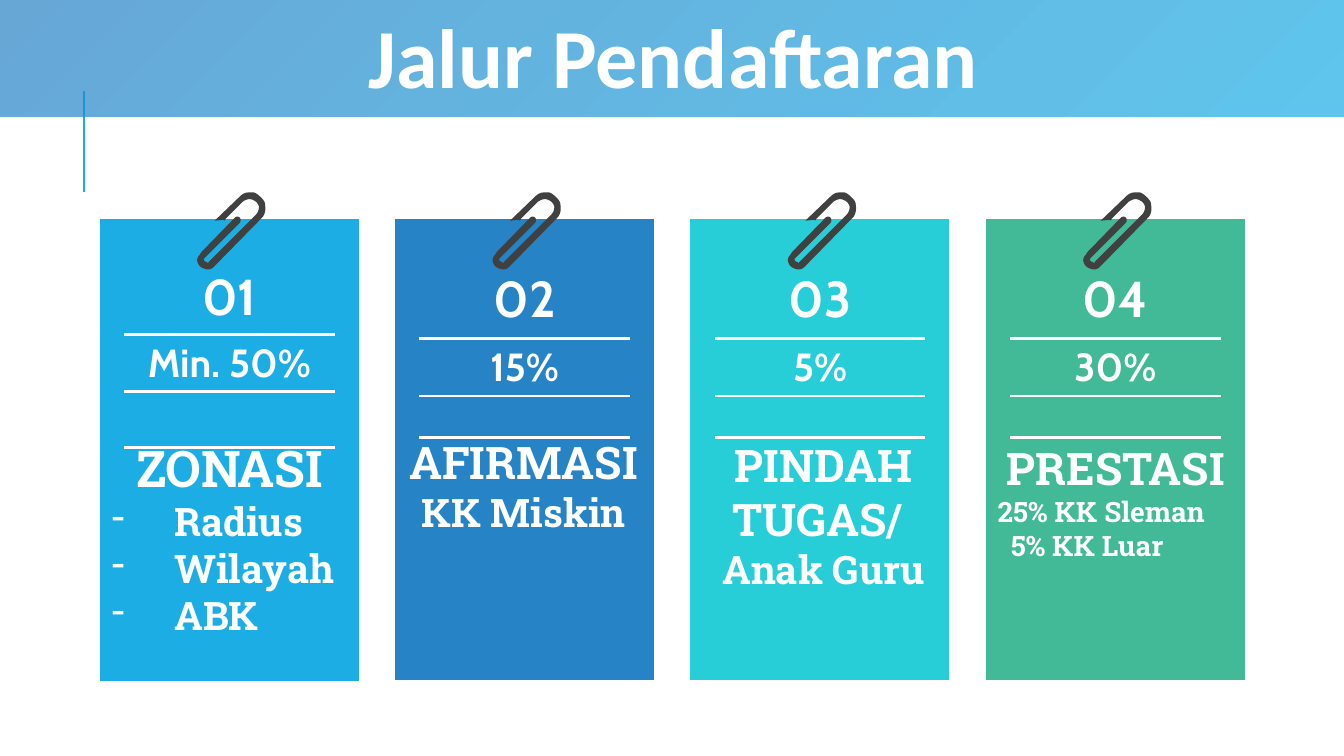
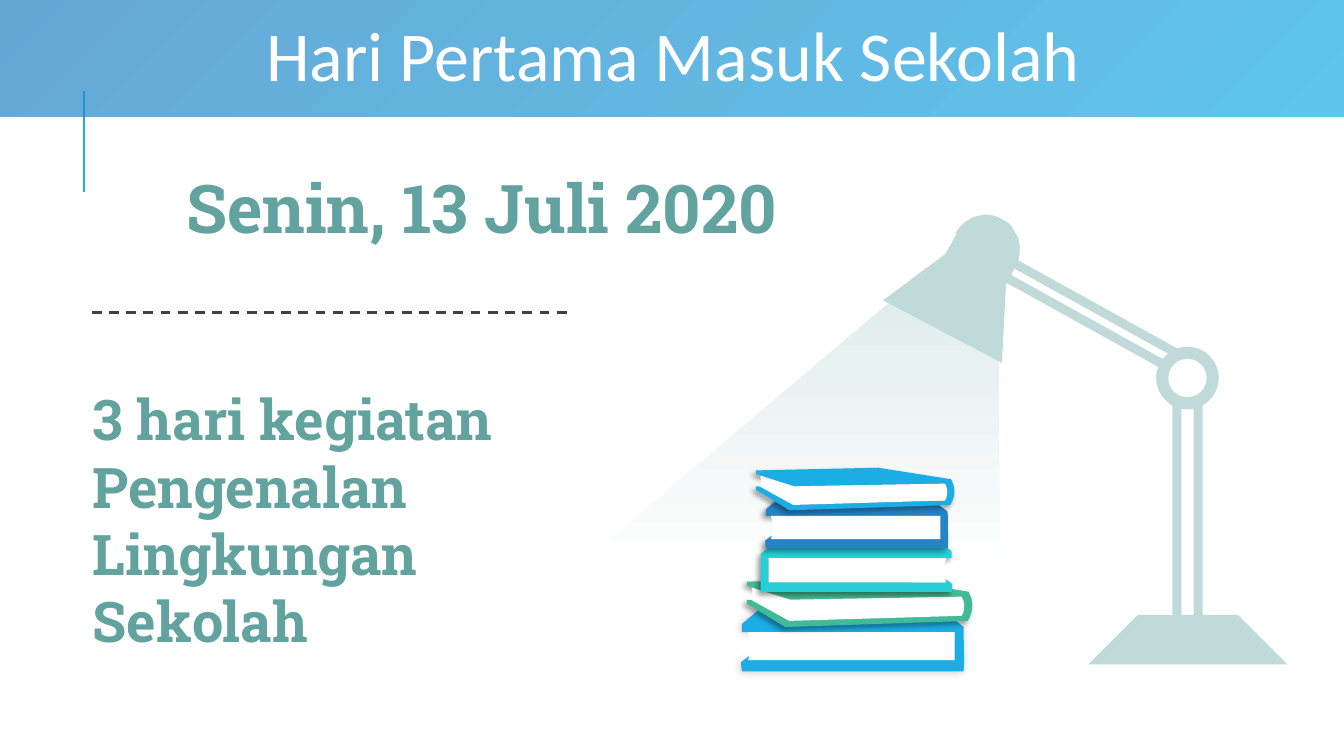
"""Build two school enrolment slides: the admission routes and the first school day."""
from lxml.etree import SubElement
from pptx import Presentation
from pptx.dml.color import RGBColor
from pptx.enum.dml import MSO_LINE
from pptx.enum.shapes import MSO_CONNECTOR, MSO_SHAPE as SHAPE
from pptx.enum.text import MSO_ANCHOR as ANCHOR, PP_ALIGN as ALIGN
from pptx.oxml.ns import qn
from pptx.util import Inches, Pt

STEP = Inches(0.1)
COLUMNS, ROWS = 133.33, 75
BAND_HEIGHT = 11.6
CARD_LEFT, CARD_TOP, CARD_PITCH = 9.9, 21.7, 29.3

WHITE = RGBColor(0xFF, 0xFF, 0xFF)
BLACK = RGBColor(0x00, 0x00, 0x00)
CHARCOAL = RGBColor(0x40, 0x40, 0x40)
SKY = RGBColor(0x1C, 0xAD, 0xE4)
BLUE = RGBColor(0x26, 0x83, 0xC6)
CYAN = RGBColor(0x27, 0xCE, 0xD7)
GREEN = RGBColor(0x42, 0xBA, 0x97)
SAGE = RGBColor(0x62, 0xA3, 0x9F)
LAMP = RGBColor(0xC0, 0xDA, 0xD9)
GLOW = RGBColor(0xE0, 0xED, 0xEC)

NO_TABLE_STYLE = "{2D5ABB26-0587-4C30-8999-92F81FD0307C}"
SLAB = "Roboto Slab"

CLIP = [
    (5, 0), (5.2, 0, 5.4, 0, 5.6, 0), (5.9, 0.1, 6.1, 0.3, 6.3, 0.5),
    (6.5, 0.7, 6.7, 0.9, 6.7, 1.2), (6.8, 1.7, 6.7, 2.3, 6.3, 2.6), (1.6, 7.4),
    (1.4, 7.6, 1.1, 7.7, 0.8, 7.6), (0.4, 7.5, 0.1, 7.3, 0, 6.9),
    (-0.1, 6.7, 0, 6.4, 0.2, 6.2), (0.4, 5.9), (3.7, 2.5),
    (3.8, 2.4, 3.9, 2.4, 4, 2.4), (4, 2.4, 4.1, 2.4, 4.2, 2.5),
    (4.3, 2.6, 4.3, 2.9, 4.2, 3), (0.7, 6.5), (0.6, 6.6, 0.6, 6.7, 0.7, 6.8),
    (0.7, 6.8, 0.8, 6.9, 0.9, 6.9), (1, 7, 1.1, 7, 1.1, 6.9), (5.8, 2.2),
    (6, 2, 6.1, 1.7, 6.1, 1.4), (6, 1, 5.7, 0.8, 5.4, 0.7),
    (5.1, 0.6, 4.8, 0.7, 4.5, 0.9), (2.6, 2.8), (2.8, 2.7), (1.7, 2.8),
    (4.2, 0.4), (4.4, 0.2, 4.7, 0, 5, 0),
]
BEAM = [(99.1, 35.2), (99, 45.9, 99.3, 56.7, 99.3, 67.4), (44.3, 67.2), (89.5, 29)]
LAMP_HEAD = [
    (11.7, 0.4), (11.2, 0.1, 10.6, 0, 10.1, 0), (8.8, 0.1, 7.8, 0.8, 7.2, 1.8),
    (7.3, 1.9), (6.2, 3.9), (0, 8.5), (11.8, 14.7), (12.2, 7), (13.4, 4.6),
    (13.4, 4.7, 14, 2.6, 13, 1.6), (12.7, 0.9, 12.3, 0.7, 11.7, 0.4),
]
FLAT_COVER = [
    (1.9, 0), (0.1, 1.5), (0.1, 2.3), (21.2, 2.4), (21.1, 5.1), (0.8, 5.1),
    (0.8, 4.7), (0, 5.3), (0.1, 6.2), (22.1, 6.2), (22.2, 5.8, 22.1, 3.3, 22.1, 1.8),
    (19.8, 0),
]
FLAT_PAGES = [(0.7, 2.3), (21.2, 2.3), (21.2, 5.1), (0.7, 5.1), (1, 4.6, 1.2, 3.3, 0.7, 2.3)]
TILTED_COVER = [
    (0.5, 2.1), (0, 2.1), (0, 2.5), (3.8, 4.8), (21.9, 4.2),
    (22.4, 3.4, 22.6, 2.4, 22, 1.3), (13.8, 0), (0, 0.3), (0, 0.7), (4, 2.1),
    (21.2, 1.8), (21.7, 2.4, 21.6, 3, 21.3, 3.7), (4.2, 4.2),
]
TILTED_PAGES = [
    (0.5, 0.9), (0.6, 1.4, 0.6, 2, 0.4, 2.1), (4.2, 4.2), (21.3, 3.7),
    (21.6, 3.3, 21.7, 2.4, 21.3, 1.8), (4.3, 2.1),
]


def write(frame, text, *, size, font=SLAB, color=WHITE, bold=True, align=ALIGN.CENTER,
          spacing=None, before=None, after=None, margin=0, bullet=None):
    paragraph = frame.add_paragraph() if frame.text else frame.paragraphs[0]
    paragraph.alignment = align
    paragraph.line_spacing = spacing
    paragraph.space_before, paragraph.space_after = before, after
    run = paragraph.add_run()
    run.text = text
    run.font.size, run.font.name, run.font.bold = Pt(size), font, bold
    run.font.color.rgb = color
    properties = paragraph._p.get_or_add_pPr()
    if margin:
        properties.set("marL", str(round(margin * STEP)))
    if bullet:
        properties.set("indent", str(-round(margin * STEP)))
        SubElement(properties, qn("a:buChar")).set("char", bullet)


def draw_outline(slide, segments, color, left=0, top=0, scale=1, mirror_width=None, shadow=None):
    points = [segments[0]]
    for segment in segments[1:]:
        if len(segment) == 2:
            points.append(segment)
            continue
        start, curve = points[-1], [segment[:2], segment[2:4], segment[4:]]
        for t in (0.2, 0.4, 0.6, 0.8, 1):
            weights = [(1 - t) ** 3, 3 * t * (1 - t) ** 2, 3 * t * t * (1 - t), t ** 3]
            points.append(tuple(sum(w * p[axis] for w, p in zip(weights, [start, *curve]))
                                for axis in (0, 1)))
    if mirror_width:
        points = [(mirror_width - x, y) for x, y in points]
    points = [((left + x * scale) * STEP, (top + y * scale) * STEP) for x, y in points]
    builder = slide.shapes.build_freeform(*points[0])
    builder.add_line_segments(points[1:], close=True)
    shape = builder.convert_to_shape()
    shape.shadow.inherit = False
    shape.fill.solid()
    shape.fill.fore_color.rgb = color
    shape.line.fill.background()
    if shadow:
        opacity, blur, distance = shadow
        effects = shape._element.spPr.find(qn("a:effectLst"))
        outer = SubElement(effects, qn("a:outerShdw"), blurRad=str(Pt(blur)), dist=str(Pt(distance)),
                           dir="8100000", algn="tr", rotWithShape="0")
        shade = SubElement(outer, qn("a:srgbClr"), val=str(BLACK))
        SubElement(shade, qn("a:alpha"), val=str(opacity * 1000))
    return shape


presentation = Presentation()
presentation.slide_width = round(COLUMNS * STEP)
presentation.slide_height = ROWS * STEP

titles = [
    ("Jalur Pendaftaran", dict(size=60, bold=True, spacing=0.9)),
    ("Hari Pertama Masuk Sekolah", dict(size=50, bold=False, spacing=0.8)),
]
for title, title_format in titles:
    slide = presentation.slides.add_slide(presentation.slide_layouts[6])
    accent = slide.shapes.add_connector(
        MSO_CONNECTOR.STRAIGHT, *[round(v * STEP) for v in (8.3, 19, 8.3, 9)])
    accent.line.color.rgb, accent.line.width = SKY, Pt(1.5)
    band = slide.shapes.add_shape(
        SHAPE.RECTANGLE, 0, 0, presentation.slide_width, round(BAND_HEIGHT * STEP))
    band.shadow.inherit = False
    band.line.fill.background()
    band.fill.gradient()
    band.fill.gradient_angle = 135
    for stop, color in zip(band.fill.gradient_stops, (SKY, BLUE)):
        stop.color.rgb = color
    for color_element in band._element.spPr.iter(qn("a:srgbClr")):
        SubElement(color_element, qn("a:alpha"), val="70000")
    box = slide.shapes.add_textbox(*[round(v * STEP) for v in (3.5, 2.1, 126.6, 7.9)])
    box.text_frame.word_wrap = True
    box.text_frame.vertical_anchor = ANCHOR.MIDDLE
    box.text_frame.margin_left = box.text_frame.margin_right = STEP // 2
    write(box.text_frame, title, font="Calibri", before=Pt(12), after=Pt(2), **title_format)

routes_slide, first_day_slide = presentation.slides

FIRST_ROWS = [4.1, 7.4, 5.5, 5.5, 7.6, 8.9, 6.7]
OTHER_ROWS = [4.2, 7.7, 5.7, 4.1, 7.9, 9.2, 7]
LIST_ITEM = dict(size=28, align=ALIGN.LEFT, margin=6.2, bullet="-")
cards = [
    ("Min. 50%", SKY, FIRST_ROWS, (10.1, 40.5, 25.4, 25.7),
     [("ZONASI", dict(size=36)), ("Radius", LIST_ITEM), ("Wilayah", LIST_ITEM), ("ABK", LIST_ITEM)]),
    ("15%", BLUE, OTHER_ROWS, (37.6, 42.2, 28.7, 11.9),
     [("AFIRMASI", dict(size=32)), ("KK Miskin", dict(size=28))]),
    ("5%", CYAN, OTHER_ROWS, (69, 43.3, 25.4, 15.6),
     [("PINDAH TUGAS/ ", dict(size=32)), ("Anak Guru", dict(size=28))]),
    ("30%", GREEN, OTHER_ROWS, (98, 41.7, 25.4, 16.1),
     [("PRESTASI", dict(size=32)), ("25% KK Sleman", dict(size=20, align=ALIGN.LEFT)),
      ("5% KK Luar", dict(size=20, align=ALIGN.LEFT, margin=1.3))]),
]
for index, (quota, color, row_heights, place, lines) in enumerate(cards):
    left = CARD_LEFT + index * CARD_PITCH
    frame = routes_slide.shapes.add_table(
        7, 3, *[round(v * STEP) for v in (left, CARD_TOP, 25.6, sum(row_heights))])
    table = frame.table
    table.first_row = table.horz_banding = False
    table._tbl.tblPr.find(qn("a:tableStyleId")).text = NO_TABLE_STYLE
    for column, width in zip(table.columns, (2.4, 20.9, 2.3)):
        column.width = round(width * STEP)
    for row, height in zip(table.rows, row_heights):
        row.height = round(height * STEP)
    for row, sides in ((1, ["a:lnB"]), (2, ["a:lnT", "a:lnB"]), (3, ["a:lnT"])):
        properties = table.cell(row, 1)._tc.get_or_add_tcPr()
        for side in sides:
            border = SubElement(properties, qn(side), w=str(Pt(2.25)))
            SubElement(SubElement(border, qn("a:solidFill")), qn("a:srgbClr"), val=str(WHITE))
    for cell in table.iter_cells():
        cell.fill.solid()
        cell.fill.fore_color.rgb = color
        cell.vertical_anchor = ANCHOR.MIDDLE
    write(table.cell(1, 1).text_frame, f"{index + 1:02}", size=36, font="Cabin")
    write(table.cell(2, 1).text_frame, quota, size=28, font="Cabin")

    draw_outline(routes_slide, CLIP, CHARCOAL, left + 9.7, 19.1)

    box = routes_slide.shapes.add_textbox(*[round(v * STEP) for v in place])
    box.text_frame.word_wrap = True
    box.text_frame.vertical_anchor = ANCHOR.MIDDLE
    for text, text_format in lines:
        write(box.text_frame, text, **text_format)

beam = draw_outline(first_day_slide, BEAM, GLOW)
beam.fill.gradient()
beam.fill.gradient_angle = 90
for stop, color, position in zip(beam.fill.gradient_stops, (WHITE, GLOW), (0.27, 1)):
    stop.color.rgb, stop.position = color, position

lamp_parts = [
    (SHAPE.RECTANGLE, (107.8, 18.5, 0.9, 23.7), 299, LAMP),
    (SHAPE.RECTANGLE, (107, 19.9, 0.9, 23.7), 299, LAMP),
    (SHAPE.RECTANGLE, (118.4, 37.5, 0.9, 23.7), 0, LAMP),
    (SHAPE.RECTANGLE, (116.3, 37.5, 0.9, 23.7), 0, LAMP),
    (SHAPE.OVAL, (114.7, 34.4, 6.2, 6.2), 0, LAMP),
    (SHAPE.OVAL, (115.9, 35.6, 3.8, 3.8), 0, WHITE),
    (SHAPE.TRAPEZOID, (108, 61, 19.7, 4.9), 0, LAMP),
]
for preset, place, rotation, color in lamp_parts:
    part = first_day_slide.shapes.add_shape(preset, *[round(v * STEP) for v in place])
    part.shadow.inherit = False
    part.rotation = rotation
    part.fill.solid()
    part.fill.fore_color.rgb = color
    part.line.fill.background()
    if preset == SHAPE.TRAPEZOID:
        part.adjustments[0] = 1
draw_outline(first_day_slide, LAMP_HEAD, LAMP, 87.6, 21.3)

FLAT, TILTED = (FLAT_COVER, FLAT_PAGES), (TILTED_COVER, TILTED_PAGES)
SOFT, STRONG = (20, 6, 1), (40, 4, 3)
books = [
    (FLAT, SKY, 73.5, 60.4, 1, None, SOFT),
    (TILTED, GREEN, 74.1, 57.4, 1, None, STRONG),
    (FLAT, CYAN, 75.4, 53.4, 0.86, 22.2, STRONG),
    (FLAT, BLUE, 75.9, 49.3, 0.82, None, STRONG),
    (TILTED, SKY, 75, 46.4, 0.88, None, STRONG),
]
for (cover, pages), color, left, top, scale, mirror_width, shadow in books:
    draw_outline(first_day_slide, cover, color, left, top, scale, mirror_width, shadow)
    draw_outline(first_day_slide, pages, WHITE, left, top, scale, mirror_width)

divider = first_day_slide.shapes.add_connector(
    MSO_CONNECTOR.STRAIGHT, *[round(v * STEP) for v in (9.1, 31, 56.6, 31)])
divider.line.color.rgb, divider.line.width = CHARCOAL, Pt(1.75)
divider.line.dash_style = MSO_LINE.DASH

notices = [
    ("3 hari kegiatan Pengenalan Lingkungan Sekolah", (8.2, 37.7, 48.5, 27.9), 40, ALIGN.LEFT),
    ("Senin, 13 Juli 2020", (3.5, 16, 74.6, 9.1), 48, ALIGN.RIGHT),
]
for text, place, size, align in notices:
    box = first_day_slide.shapes.add_textbox(*[round(v * STEP) for v in place])
    box.text_frame.word_wrap = True
    write(box.text_frame, text, size=size, color=SAGE, align=align)

for slide in presentation.slides:
    for connector in slide.element.iter(qn("p:cxnSp")):
        SubElement(connector.spPr, qn("a:effectLst"))

presentation.save("out.pptx")
